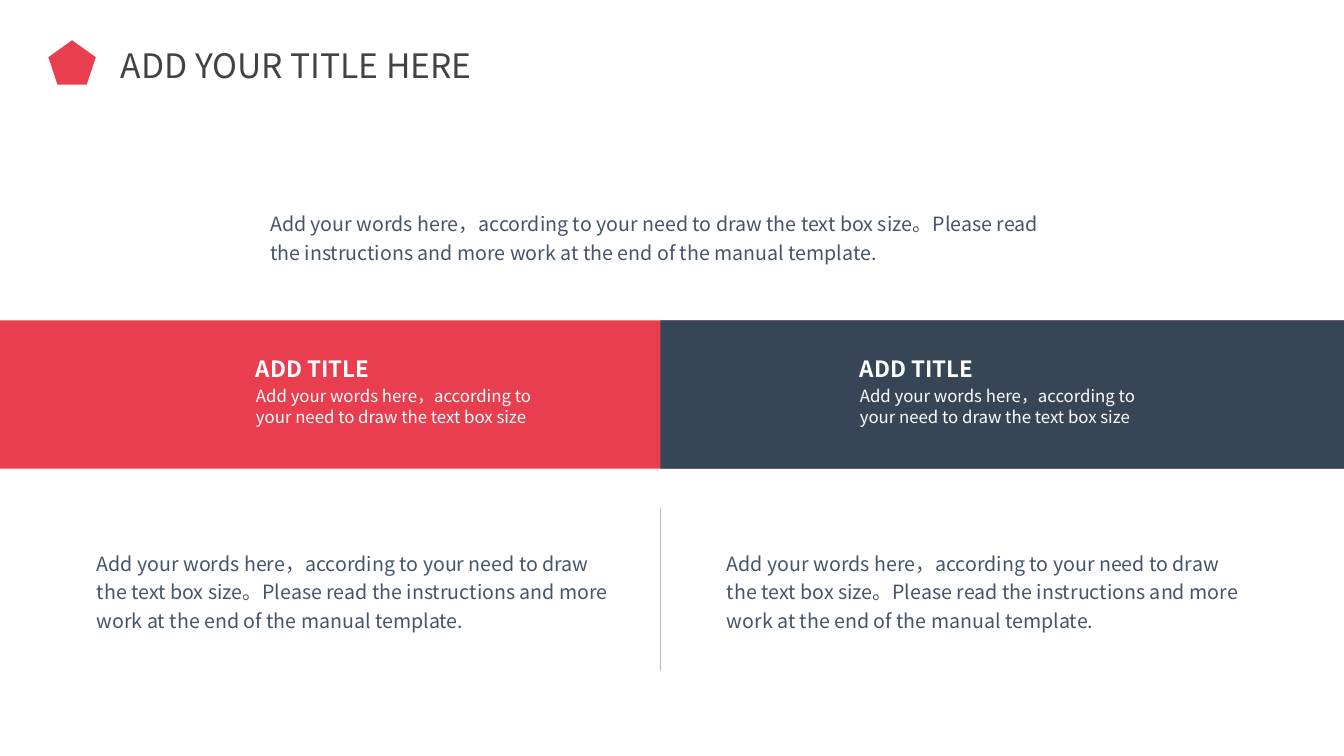
"""Build a title slide with a two-colour band and paired text columns."""
import dataclasses

import lxml.etree
import pptx
import pptx.dml.color
import pptx.enum.shapes
import pptx.enum.text
import pptx.oxml.ns
import pptx.util

RGBColor = pptx.dml.color.RGBColor
RED = RGBColor(0xE8, 0x3E, 0x50)
NAVY = RGBColor(0x37, 0x46, 0x56)
SLATE = RGBColor(0x44, 0x54, 0x69)
CHARCOAL = RGBColor(0x42, 0x42, 0x42)
PALE_BLUE = RGBColor(0xAD, 0xBA, 0xCA)
WHITE = RGBColor(0xFF, 0xFF, 0xFF)

FONT = "Noto Sans CJK JP"
SLIDE_WIDTH = pptx.util.Inches(13.33)
SLIDE_HEIGHT = pptx.util.Inches(7.5)
GRID_COLUMNS = GRID_ROWS = 100
MIDDLE = 49.13
BAND_TOP, BAND_HEIGHT = 42.4, 19.6

SHORT_TEXT = "Add your words here，according to your need to draw the text box size"
LONG_TEXT = (
    SHORT_TEXT + "。Please read the instructions and more work "
    "at the end of the manual template."
)


@dataclasses.dataclass(frozen=True)
class Area:
    """Place and size in grid columns and rows."""

    column: float
    row: float
    width: float
    height: float

    def lengths(self) -> tuple[int, int, int, int]:
        """Return left, top, width and height as slide lengths."""
        return (
            across(self.column), down(self.row),
            across(self.width), down(self.height),
        )


@dataclasses.dataclass(frozen=True)
class Panel:
    """One half of the slide: band heading, band text and lower text."""

    heading_column: float
    band_text_width: float
    lower_column: float


PANELS = (Panel(19.05, 21, 7.2), Panel(63.98, 20.7, 54.08))


def across(columns: float) -> int:
    """Convert grid columns to a length."""
    return round(SLIDE_WIDTH * columns / GRID_COLUMNS)


def down(rows: float) -> int:
    """Convert grid rows to a length."""
    return round(SLIDE_HEIGHT * rows / GRID_ROWS)


def write_text(
    shape: pptx.shapes.base.BaseShape,
    text: str,
    *,
    size: float,
    color: RGBColor,
    bold: bool = False,
    line_spacing: float = 1.0,
    space_before: float = 0.2,
    margin: float | None = 0,
) -> None:
    """Put formatted text in a shape."""
    frame = shape.text_frame
    frame.text = text
    frame.word_wrap = True
    frame.auto_size = pptx.enum.text.MSO_AUTO_SIZE.SHAPE_TO_FIT_TEXT
    frame.vertical_anchor = pptx.enum.text.MSO_ANCHOR.TOP
    if margin is not None:
        frame.margin_left = frame.margin_right = pptx.util.Inches(margin)
        frame.margin_top = frame.margin_bottom = pptx.util.Inches(margin)
    paragraph = frame.paragraphs[0]
    paragraph.alignment = pptx.enum.text.PP_ALIGN.LEFT
    paragraph.line_spacing = line_spacing
    paragraph.space_before = pptx.util.Pt(size * space_before)
    font = paragraph.runs[0].font
    font.name = FONT
    font.size = pptx.util.Pt(size)
    font.bold = bold
    font.color.rgb = color


def add_title(slide: pptx.slide.Slide, text: str, area: Area) -> None:
    """Move and fill the title placeholder."""
    title = slide.shapes.title
    title.left, title.top, title.width, title.height = area.lengths()
    write_text(title, text, size=24, color=CHARCOAL, space_before=0, margin=None)


def add_text(slide: pptx.slide.Slide, text: str, area: Area, **text_format) -> None:
    """Add a text box."""
    write_text(slide.shapes.add_textbox(*area.lengths()), text, **text_format)


def add_long_text(slide: pptx.slide.Slide, area: Area) -> None:
    """Add a long slate paragraph."""
    add_text(slide, LONG_TEXT, area, size=14, color=SLATE, line_spacing=1.2)


def add_block(
    slide: pptx.slide.Slide,
    kind: pptx.enum.shapes.MSO_SHAPE,
    area: Area,
    color: RGBColor,
) -> None:
    """Add a plain filled shape."""
    shape = slide.shapes.add_shape(kind, *area.lengths())
    shape.shadow.inherit = False
    shape.fill.solid()
    shape.fill.fore_color.rgb = color
    shape.line.fill.background()


def add_divider(
    slide: pptx.slide.Slide, column: float, top: float, bottom: float
) -> None:
    """Add a thin vertical line."""
    connector = slide.shapes.add_connector(
        pptx.enum.shapes.MSO_CONNECTOR.STRAIGHT,
        across(column), down(top), across(column), down(bottom),
    )
    connector.line.color.rgb = PALE_BLUE
    connector.line.width = pptx.util.Pt(1)
    lxml.etree.SubElement(
        connector._element.spPr, pptx.oxml.ns.qn("a:effectLst")
    )


def add_panel(slide: pptx.slide.Slide, panel: Panel) -> None:
    """Add the texts of one half."""
    column = panel.heading_column
    add_text(
        slide, "ADD TITLE", Area(column, 46.93, 16.05, 3.6),
        size=16, color=WHITE, bold=True,
    )
    add_text(
        slide, SHORT_TEXT, Area(column, 51.07, panel.band_text_width, 8.13),
        size=12, color=WHITE,
    )
    add_long_text(slide, Area(panel.lower_column, 72.4, 38.25, 11.33))


def main() -> None:
    """Build and save the presentation."""
    presentation = pptx.Presentation()
    presentation.slide_width = SLIDE_WIDTH
    presentation.slide_height = SLIDE_HEIGHT
    slide = presentation.slides.add_slide(presentation.slide_layouts[5])
    shapes = pptx.enum.shapes.MSO_SHAPE

    add_block(slide, shapes.REGULAR_PENTAGON, Area(3.6, 5.33, 3.53, 5.87), RED)
    add_title(slide, "ADD YOUR TITLE HERE", Area(8.25, 5.33, 37.13, 6.8))
    for column, width, color in ((-0.08, 100.2, RED), (MIDDLE, 51, NAVY)):
        area = Area(column, BAND_TOP, width, BAND_HEIGHT)
        add_block(slide, shapes.RECTANGLE, area, color)
    add_divider(slide, MIDDLE, 67.2, 88.8)
    add_long_text(slide, Area(20.1, 27.47, 58.05, 7.07))
    for panel in PANELS:
        add_panel(slide, panel)
    presentation.save("out.pptx")


if __name__ == "__main__":
    main()
